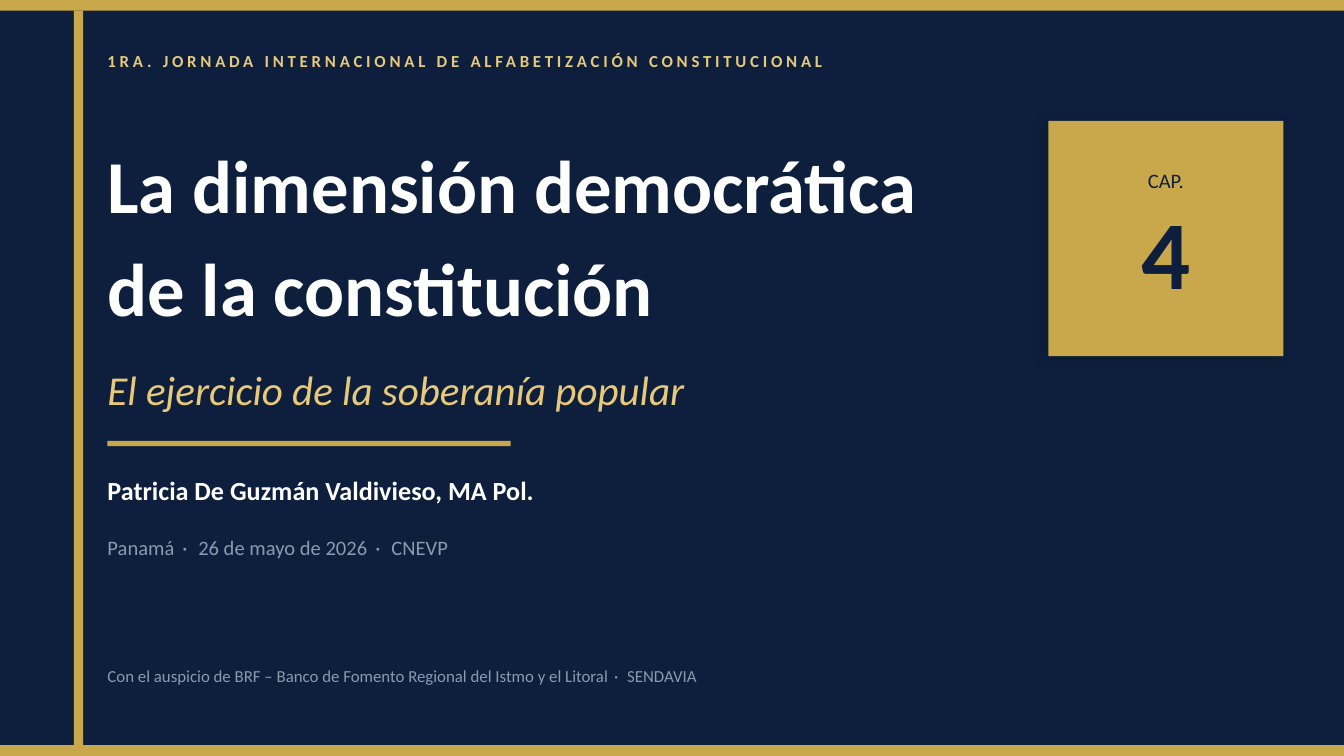
from lxml.etree import SubElement as Sub
from pptx import Presentation
from pptx.dml.color import RGBColor
from pptx.enum.shapes import MSO_SHAPE as Shape
from pptx.enum.text import MSO_ANCHOR as Anchor, PP_ALIGN as Align
from pptx.oxml.ns import qn
from pptx.util import Inches, Pt

NAVY, GOLD, SAND, WHITE, GREY = "0D1F3C", "C9A84C", "E8C97A", "FFFFFF", "8A9BB0"
WIDE = 10
HIGH = WIDE * 9 / 16
EDGE = 0.08
LEFT = 0.8
BADGE = (7.8, 0.9, 1.75, 1.75)
DOT = " · "

deck = Presentation()
deck.slide_width, deck.slide_height = Inches(WIDE), Inches(HIGH)
slide = deck.slides.add_slide(deck.slide_layouts[6])
slide.background.fill.solid()
slide.background.fill.fore_color.rgb = RGBColor.from_string(NAVY)


def block(*area):
    """Add a gold rectangle without line or shadow."""
    shape = slide.shapes.add_shape(Shape.RECTANGLE, *map(Inches, area))
    shape.shadow.inherit = False
    shape.fill.solid()
    shape.fill.fore_color.rgb = RGBColor.from_string(GOLD)
    shape.line.fill.background()
    return shape


def write(area, lines, align=Align.LEFT, gap=None, track=0):
    """Add a text box; each line is a text, a colour and its font values.

    Dots between parts are tracked wider than the text around them.
    """
    frame = slide.shapes.add_textbox(*map(Inches, area)).text_frame
    frame.word_wrap = True
    frame.vertical_anchor = Anchor.MIDDLE
    for side in ("left", "top", "right", "bottom"):
        setattr(frame, f"margin_{side}", 0)
    for i, (text, color, look) in enumerate(lines):
        para = frame.add_paragraph() if i else frame.paragraphs[0]
        para.alignment = align
        para.line_spacing = gap
        for part in text.replace(DOT, f"|{DOT}|").split("|"):
            run = para.add_run()
            run.text = part
            run.font.name = "Calibri"
            run.font.color.rgb = RGBColor.from_string(color)
            for key, value in look.items():
                setattr(run.font, key, value)
            space = 0.15 * run.font.size.pt if part == DOT else track
            if space:
                run.font._element.set("spc", str(round(space * 100)))


# Frame, side bar and rule
for top in (0, HIGH - EDGE):
    block(0, top, WIDE, EDGE)
block(0.55, EDGE, 0.07, HIGH - 2 * EDGE)
block(LEFT, 3.28, 3, 0.04)

# Event and title
head = {"size": Pt(40), "bold": True}
write((LEFT, 0.28, 8.8, 0.35),
      [("1RA. JORNADA INTERNACIONAL DE ALFABETIZACIÓN CONSTITUCIONAL", SAND,
        {"size": Pt(9), "bold": True})], track=2)
write((LEFT, 0.75, 8.5, 1.9),
      [("La dimensión democrática", WHITE, head),
       ("de la constitución", WHITE, head)], gap=1.15)

# Single lines: top, width, height, text, colour, font values
for top, wide, high, text, color, look in (
    (2.62, 8.5, 0.55, "El ejercicio de la soberanía popular", SAND,
     {"size": Pt(22), "italic": True}),
    (3.45, 8.5, 0.4, "Patricia De Guzmán Valdivieso, MA Pol.", WHITE,
     {"size": Pt(14), "bold": True}),
    (3.9, 8.5, 0.35, DOT.join(("Panamá", "26 de mayo de 2026", "CNEVP")), GREY,
     {"size": Pt(11)}),
    (4.85, 8.8, 0.35, DOT.join((
        "Con el auspicio de BRF – Banco de Fomento Regional del Istmo y el Litoral",
        "SENDAVIA")), GREY, {"size": Pt(9)}),
):
    write((LEFT, top, wide, high), [(text, color, look)])

# Chapter badge with a soft shadow
badge = block(*BADGE)
glow = Sub(badge._element.spPr.find(qn("a:effectLst")), qn("a:outerShdw"),
           blurRad=str(Pt(8)), dist=str(Pt(3)), dir=str(135 * 60000),
           algn="bl", rotWithShape="0")
tint = Sub(glow, qn("a:srgbClr"), val="000000")
Sub(tint, qn("a:alpha"), val="12000")
write(BADGE, [("CAP.", NAVY, {"size": Pt(11)}),
              ("4", NAVY, {"size": Pt(52), "bold": True})], Align.CENTER)

deck.save("out.pptx")
